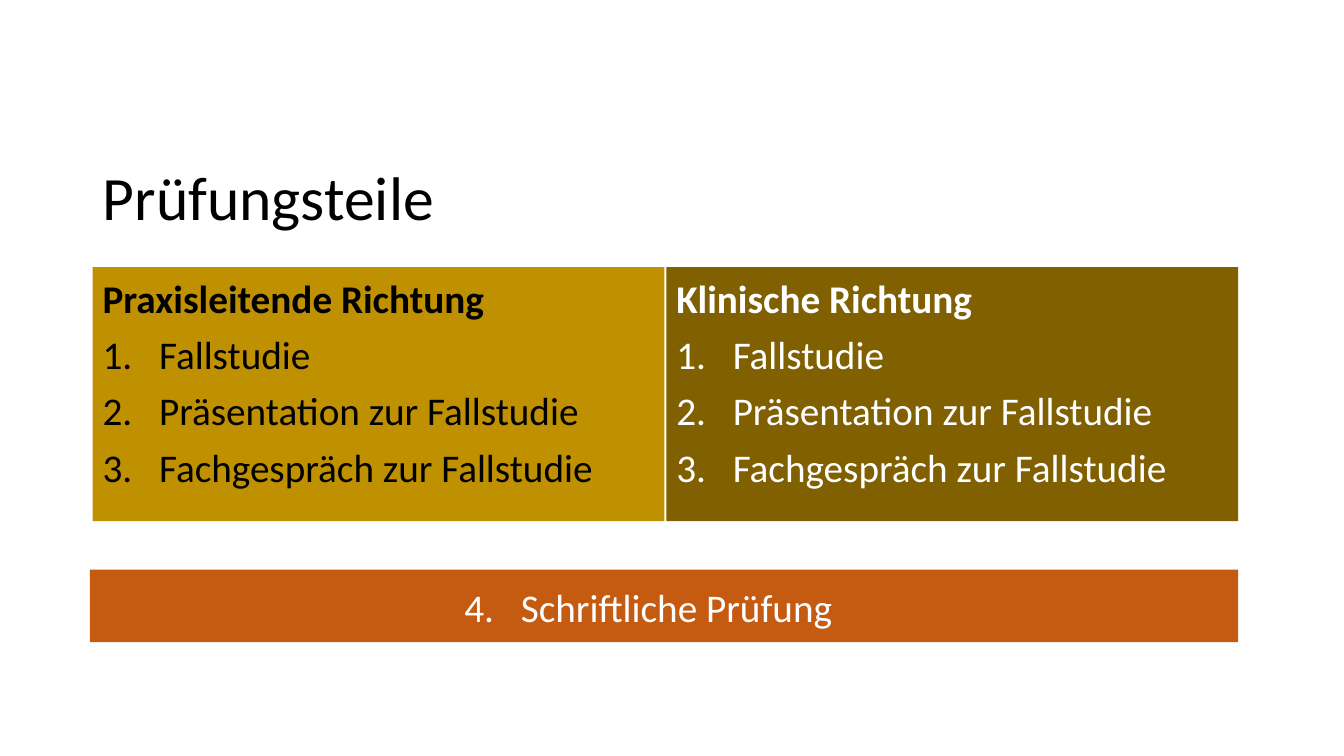
from dataclasses import dataclass

from lxml import etree
from pptx import Presentation, util as u
from pptx.dml.color import RGBColor
from pptx.enum import shapes, text
from pptx.oxml import ns

SLIDE_W, SLIDE_H = 13.33, 7.5
LEFT, COLUMN_W, GUTTER = 0.92, 5.67, 0.02
BOX_TOP, BOX_H = 2.65, 2.52
BAR_LEFT, BAR_TOP, BAR_H = 0.89, 5.65, 0.72
HANGING = 0.56
FONT = "Calibri"
COLORS = {
    "black": "000000",
    "white": "FFFFFF",
    "gold": "BF9000",
    "olive": "806000",
    "orange": "C55A11",
}
PARTS = ("Fallstudie", "Präsentation zur Fallstudie", "Fachgespräch zur Fallstudie")


@dataclass(frozen=True)
class Panel:
    left: float
    top: float
    width: float
    height: float
    fill: str
    ink: str
    items: tuple[str, ...]
    heading: str = ""
    start: int = 1
    indent: float = HANGING
    align: text.PP_ALIGN = text.PP_ALIGN.LEFT
    anchor: text.MSO_ANCHOR = text.MSO_ANCHOR.TOP


def column_left(index: int) -> float:
    return LEFT + index * (COLUMN_W + GUTTER)


def rgb(name: str) -> RGBColor:
    return RGBColor.from_string(COLORS[name])


def format_runs(p, size: float, color: str, bold: bool = False) -> None:
    for r in p.runs:
        r.font.name = FONT
        r.font.size = u.Pt(size)
        r.font.bold = bold
        r.font.color.rgb = rgb(color)


def number(p, indent: float, start: int) -> None:
    pPr = p._p.get_or_add_pPr()
    pPr.set("marL", str(u.Inches(indent)))
    pPr.set("indent", str(u.Inches(-HANGING)))
    bullet = etree.SubElement(pPr, ns.qn("a:buAutoNum"), type="arabicPeriod")
    if start > 1:
        bullet.set("startAt", str(start))


def add_title(s, title: str) -> None:
    sp = s.shapes.title
    sp.left, sp.top = u.Inches(LEFT), u.Inches(1.5)
    sp.width, sp.height = u.Inches(11.5), u.Inches(0.98)
    tf = sp.text_frame
    tf.text = title
    tf.auto_size = text.MSO_AUTO_SIZE.NONE
    tf.vertical_anchor = text.MSO_ANCHOR.MIDDLE
    p = tf.paragraphs[0]
    p.alignment = text.PP_ALIGN.LEFT
    p.line_spacing = 0.9
    format_runs(p, 44, "black")


def add_panel(s, panel: Panel) -> None:
    bounds = (panel.left, panel.top, panel.width, panel.height)
    sp = s.shapes.add_shape(shapes.MSO_SHAPE.RECTANGLE, *map(u.Inches, bounds))
    sp.shadow.inherit = False
    sp.fill.solid()
    sp.fill.fore_color.rgb = rgb(panel.fill)
    sp.line.fill.background()
    tf = sp.text_frame
    tf.word_wrap = True
    tf.vertical_anchor = panel.anchor
    tf.margin_left = tf.margin_right = u.Inches(0.1)
    tf.margin_top, tf.margin_bottom = u.Inches(0.12), u.Inches(0.05)
    headings = (panel.heading,) if panel.heading else ()
    tf.text = "\n".join(headings + panel.items)
    for i, p in enumerate(tf.paragraphs):
        is_heading = i < len(headings)
        if not is_heading:
            number(p, panel.indent, panel.start)
        p.alignment = panel.align
        p.line_spacing = 0.9
        p.space_before = u.Pt(10 if i else 0)
        format_runs(p, 28, panel.ink, is_heading)


def main() -> None:
    prs = Presentation()
    prs.slide_width, prs.slide_height = u.Inches(SLIDE_W), u.Inches(SLIDE_H)
    s = prs.slides.add_slide(prs.slide_layouts[5])
    add_title(s, "Prüfungsteile")
    directions = (
        ("Praxisleitende Richtung", "gold", "black"),
        ("Klinische Richtung", "olive", "white"),
    )
    for i, (heading, fill, ink) in enumerate(directions):
        add_panel(s, Panel(column_left(i), BOX_TOP, COLUMN_W, BOX_H,
                           fill, ink, PARTS, heading))
    bar_width = column_left(1) + COLUMN_W - BAR_LEFT
    add_panel(s, Panel(BAR_LEFT, BAR_TOP, bar_width, BAR_H, "orange", "white",
                       ("Schriftliche Prüfung\t",), start=4, indent=0.58,
                       align=text.PP_ALIGN.CENTER, anchor=text.MSO_ANCHOR.MIDDLE))
    prs.save("out.pptx")


if __name__ == "__main__":
    main()
